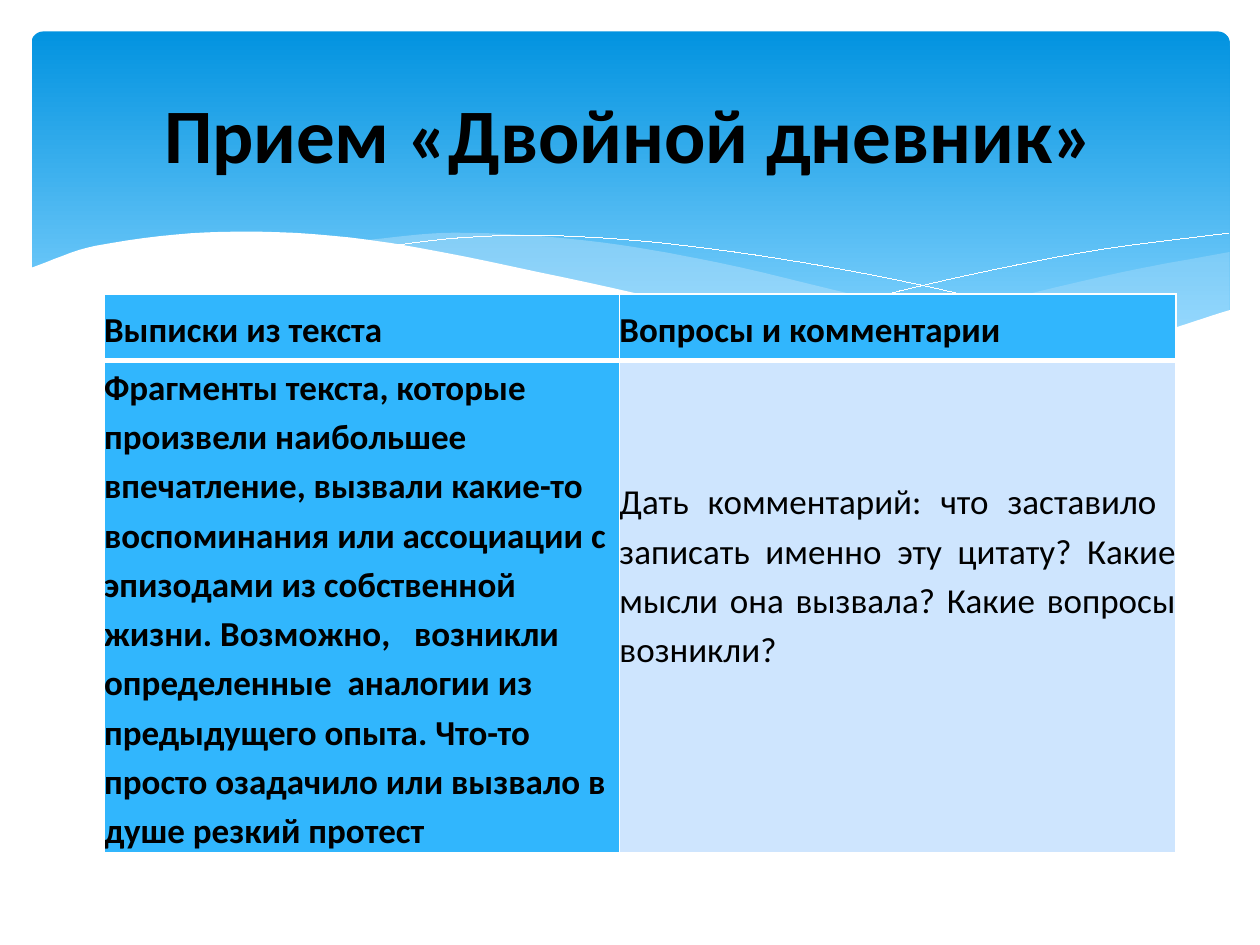
from lxml import etree
from pptx import Presentation
from pptx import util as u
from pptx.dml import color as dml
from pptx.enum import shapes, text
from pptx.oxml import ns

COLORS = {
    "sky_top": "0293E0",
    "sky_bottom": "83D3FE",
    "wave": "C6E7FC",
    "white": "FFFFFF",
    "black": "000000",
    "cell": "31B6FD",
    "cell_light": "CEE5FE",
}
PAINT = {name: dml.RGBColor.from_string(code) for name, code in COLORS.items()}
FONT = "Calibri"
STEPS = 8        # straight pieces between two knots of a curve
PRECISION = 10   # freeform units in one point


def smooth_curve(knots):
    """Cubic Hermite curve; each knot's slope follows its two neighbours."""
    last = len(knots) - 1
    slopes = []
    for i in range(last + 1):
        (x0, y0), (x1, y1) = knots[max(i - 1, 0)], knots[min(i + 1, last)]
        slopes.append((y1 - y0) / (x1 - x0))
    curve = [knots[0]]
    for i in range(last):
        (x0, y0), (x1, y1) = knots[i], knots[i + 1]
        span_width = x1 - x0
        for step in range(1, STEPS + 1):
            t = step / STEPS
            blend = t * t * (3 - 2 * t)
            bend = t * (1 - t) * ((1 - t) * slopes[i] - t * slopes[i + 1])
            curve.append((x0 + t * span_width,
                          y0 + blend * (y1 - y0) + bend * span_width))
    return curve


def add_text(para, words, size, bold=True):
    span = para.add_run()
    span.text = words
    span.font.name = FONT
    span.font.size = u.Pt(size)
    span.font.bold = bold
    span.font.color.rgb = PAINT["black"]


deck = Presentation()
deck.slide_width, deck.slide_height = u.Pt(720), u.Pt(540)
page = deck.slides.add_slide(deck.slide_layouts[6])

# Blue panel with a vertical gradient
panel = page.shapes.add_shape(
    shapes.MSO_SHAPE.ROUNDED_RECTANGLE, u.Pt(18), u.Pt(18), u.Pt(684.7), u.Pt(194.5))
panel.adjustments[0] = 0.034
panel.shadow.inherit = False
panel.line.fill.background()
panel.fill.gradient()
panel.fill.gradient_angle = 270
for stop, name, position in zip(
        panel.fill.gradient_stops, ("sky_top", "sky_bottom"), (0, 0.9)):
    stop.color.rgb = PAINT[name]
    stop.position = position

# Knots of the curves, in points: left to right on top, back along the bottom
right_top = [(476, 191), (542, 178.5), (641.5, 155.5), (702.7, 144)]
right_bottom = [(702.7, 178), (683, 185), (640, 196), (578, 200), (518, 196), (476, 191)]
middle_top = [(206, 137.5), (260, 133), (335, 137.5), (410, 150), (508, 173),
              (581, 187), (643, 196.5)]
middle_bottom = [(643, 196.5), (589, 200), (510.5, 195), (433, 183.5),
                 (323, 160), (260.5, 146), (206, 137.5)]
falling_line = [(222.5, 140.5), (261.5, 136), (312, 134.5), (384, 139.5),
                (479, 153.5), (572.5, 173.5), (653, 196)]
rising_line = [(441.5, 185), (538.5, 160.5), (623.5, 143.5), (702, 133.2)]
front_top = [(16.6, 153.5), (54.5, 140.5), (127.5, 132.5), (210, 137),
             (322, 158.5), (434, 183), (522.5, 196), (582.5, 199.5),
             (647.5, 193.5), (703.4, 177)]
front_bottom = [(703.4, 237), (16.6, 237)]

# Waves from back to front: curves of the outline, fill, opacity in percent
waves = [
    ((right_top, right_bottom), "wave", 29),
    ((middle_top, middle_bottom), "wave", 40),
    ((falling_line,), None, 100),
    ((rising_line,), None, 100),
    ((front_top, front_bottom), "white", 100),
]
for curves, fill_name, opacity in waves:
    outline = [(x * PRECISION, y * PRECISION)
               for knots in curves for x, y in smooth_curve(knots)]
    builder = page.shapes.build_freeform(*outline[0], scale=u.Pt(1) / PRECISION)
    builder.add_line_segments(outline[1:], close=fill_name is not None)
    wave = builder.convert_to_shape()
    wave.shadow.inherit = False
    if fill_name is None:
        wave.fill.background()
        wave.line.color.rgb = PAINT["white"]
        wave.line.width = u.Pt(0.01)
        continue
    wave.line.fill.background()
    wave.fill.solid()
    wave.fill.fore_color.rgb = PAINT[fill_name]
    if opacity < 100:
        fill_color = wave.fill._xPr.find(".//" + ns.qn("a:srgbClr"))
        etree.SubElement(fill_color, ns.qn("a:alpha"), val=str(opacity * 1000))

# Diary table: words, fill, bold, alignment, bottom margin
rows = [
    [("Выписки из текста", "cell", True, None, 0),
     ("Вопросы и комментарии", "cell", True, None, 0)],
    [("Фрагменты текста, которые произвели наибольшее впечатление, вызвали "
      "какие-то воспоминания или ассоциации с эпизодами из собственной жизни. "
      "Возможно,   возникли определенные  аналогии из предыдущего опыта. "
      "Что-то  просто озадачило или вызвало в  душе резкий протест",
      "cell", True, None, 0),
     ("Дать комментарий: что заставило  записать именно эту цитату? "
      "Какие мысли она вызвала? Какие вопросы возникли?",
      "cell_light", False, text.PP_ALIGN.JUSTIFY, 38)],
]
widths, heights = (294.5, 318), (38, 257)
table = page.shapes.add_table(
    2, 2, u.Pt(59.5), u.Pt(168), u.Pt(sum(widths)), u.Pt(sum(heights))).table
for column, width in zip(table.columns, widths):
    column.width = u.Pt(width)
for row_index, (row, height) in enumerate(zip(rows, heights)):
    table.rows[row_index].height = u.Pt(height)
    borders = {"L": 1, "R": 1, "T": 1, "B": 1}
    borders["T" if row_index else "B"] = 3  # thick rule under the header
    for column_index, (words, fill_name, bold, align, bottom) in enumerate(row):
        cell = table.cell(row_index, column_index)
        cell.margin_left = cell.margin_right = cell.margin_top = u.Pt(0)
        cell.margin_bottom = u.Pt(bottom)
        cell.vertical_anchor = text.MSO_ANCHOR.MIDDLE
        properties = cell._tc.get_or_add_tcPr()
        for side, weight in borders.items():
            edge = etree.SubElement(
                properties, ns.qn("a:ln" + side), w=str(u.Pt(weight)))
            edge_fill = etree.SubElement(edge, ns.qn("a:solidFill"))
            etree.SubElement(edge_fill, ns.qn("a:srgbClr"), val=COLORS["white"])
        cell.fill.solid()
        cell.fill.fore_color.rgb = PAINT[fill_name]
        para = cell.text_frame.paragraphs[0]
        para.alignment = align
        para.line_spacing = 1.15
        para.space_after = u.Pt(10)
        add_text(para, words, 20, bold)

# Title
box = page.shapes.add_textbox(u.Pt(36), u.Pt(26.6), u.Pt(648), u.Pt(98.6))
box.text_frame.word_wrap = True
box.text_frame.vertical_anchor = text.MSO_ANCHOR.MIDDLE
title = box.text_frame.paragraphs[0]
title.alignment = text.PP_ALIGN.CENTER
add_text(title, "Прием «Двойной дневник»", 44)

deck.save("out.pptx")
